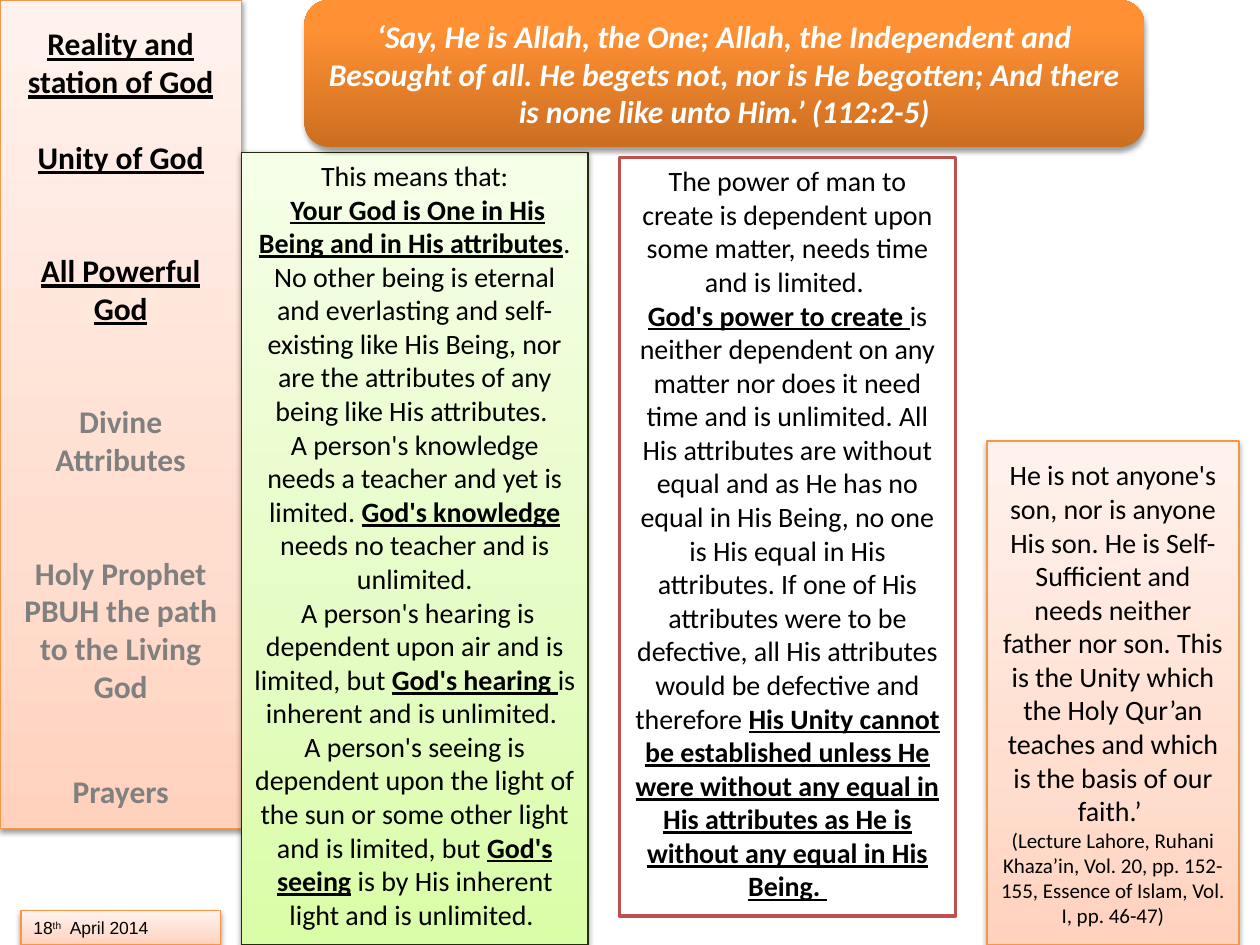
from copy import deepcopy

from lxml.etree import SubElement
from pptx import Presentation
from pptx.dml.color import RGBColor
from pptx.enum.shapes import MSO_SHAPE
from pptx.enum.text import MSO_ANCHOR, PP_ALIGN
from pptx.oxml.ns import qn
from pptx.util import Pt

BLACK = RGBColor(0x00, 0x00, 0x00)
WHITE = RGBColor(0xFF, 0xFF, 0xFF)
GREY = RGBColor(0x80, 0x80, 0x80)
ORANGE = RGBColor(0xF7, 0x96, 0x46)
RED = RGBColor(0xC0, 0x50, 0x4D)
DARK_GREEN = RGBColor(0x23, 0x2C, 0x12)

# Gradients run from bottom to top: (position, colour)
PEACH = [(0, RGBColor(0xFF, 0xD2, 0xBD)), (0.35, RGBColor(0xFF, 0xDE, 0xD0)),
         (1, RGBColor(0xFF, 0xF2, 0xED))]
LIME = [(0, RGBColor(0xDA, 0xFD, 0xA7)), (0.35, RGBColor(0xE4, 0xFC, 0xC2)),
        (1, RGBColor(0xF5, 0xFF, 0xE7))]
AMBER = [(0, RGBColor(0xCC, 0x6E, 0x20)), (0.8, RGBColor(0xFF, 0x90, 0x34)),
         (1, RGBColor(0xFF, 0x91, 0x36))]

# Sidebar topics: text, space before, already covered
TOPICS = [
    ("Reality and station of God", 0, True),
    ("Unity of God", 21.6, True),
    ("All Powerful God", 43.2, True),
    ("Divine Attributes", 43.2, False),
    ("Holy Prophet PBUH the path to the Living God", 43.2, False),
    ("Prayers", 38.5, False),
]

# Asterisks enclose the emphasised words
MEANING = [
    "This means that:",
    " *Your God is One in His Being and in His attributes*. No other being is eternal and "
    "everlasting and self-existing like His Being, nor are the attributes of any being like "
    "His attributes. ",
    "A person's knowledge needs a teacher and yet is limited. *God's knowledge *needs no "
    "teacher and is unlimited.",
    " A person's hearing is dependent upon air and is limited, but *God's hearing *is "
    "inherent and is unlimited. ",
    "A person's seeing is dependent upon the light of the sun or some other light and is "
    "limited, but *God's seeing* is by His inherent light and is unlimited. ",
]
POWER = [
    "The power of man to create is dependent upon some matter, needs time and is limited. ",
    "*God's power to create *is neither dependent on any matter nor does it need time and is "
    "unlimited. All His attributes are without equal and as He has no equal in His Being, no "
    "one is His equal in His attributes. If one of His attributes were to be defective, all "
    "His attributes would be defective and therefore *His Unity cannot be established unless "
    "He were without any equal in His attributes as He is without any equal in His Being. *",
]
CONCLUSION = (
    "He is not anyone's son, nor is anyone His son. He is Self-Sufficient and needs neither "
    "father nor son. This is the Unity which the Holy Qur’an teaches and which is the basis "
    "of our faith.’ "
)
REFERENCE = (
    "(Lecture Lahore, Ruhani Khaza’in, Vol. 20, pp. 152-155, Essence of Islam, Vol. I, "
    "pp. 46-47)"
)
QUOTE = (
    "‘Say, He is Allah, the One; Allah, the Independent and Besought of all. He begets not, "
    "nor is He begotten; And there is none like unto Him.’ (112:2-5)"
)


class SlideBuilder:
    font_name = "Calibri"

    def __init__(self, slide):
        self.slide = slide

    def panel(self, left, top, width, height, fill, line=None, line_width=0.75,
              kind=MSO_SHAPE.RECTANGLE, anchor=MSO_ANCHOR.TOP):
        shape = self.slide.shapes.add_shape(
            kind, Pt(left), Pt(top), Pt(width), Pt(height))
        shape.shadow.inherit = False
        if isinstance(fill, list):
            self.gradient(shape, fill)
            self.shadow(shape)
        else:
            shape.fill.solid()
            shape.fill.fore_color.rgb = fill
        if line is None:
            shape.line.fill.background()
        else:
            shape.line.color.rgb = line
            shape.line.width = Pt(line_width)
        shape.text_frame.word_wrap = True
        shape.text_frame.vertical_anchor = anchor
        return shape

    def gradient(self, shape, stops):
        shape.fill.gradient()
        shape.fill.gradient_angle = 90
        stop_list = shape._element.spPr.find(qn("a:gradFill")).find(qn("a:gsLst"))
        stop_list.append(deepcopy(stop_list[-1]))
        for stop, (position, color) in zip(shape.fill.gradient_stops, stops):
            stop.position = position
            stop.color.rgb = color

    def shadow(self, shape):
        effects = shape._element.spPr.find(qn("a:effectLst"))
        outer = SubElement(effects, qn("a:outerShdw"), blurRad=str(Pt(3.1)),
                           dist=str(Pt(1.6)), dir="5400000", rotWithShape="0")
        color = SubElement(outer, qn("a:srgbClr"), val="000000")
        SubElement(color, qn("a:alpha"), val="38000")

    def paragraph(self, shape, text, size=16, color=BLACK, name=font_name,
                  align=PP_ALIGN.CENTER, space_before=0):
        frame = shape.text_frame
        paragraph = frame.paragraphs[0]
        if paragraph.runs:
            paragraph = frame.add_paragraph()
        paragraph.alignment = align
        paragraph.space_before = Pt(space_before)
        paragraph.font.size = Pt(size)
        paragraph.font.name = name
        paragraph.font.color.rgb = color
        for index, part in enumerate(text.split("*")):
            if part:
                run = paragraph.add_run()
                run.text = part
                if index % 2:
                    run.font.bold = run.font.underline = True
        return paragraph


def main():
    presentation = Presentation()
    presentation.slide_width, presentation.slide_height = Pt(720), Pt(540)
    blank_layout = presentation.slide_layouts[6]
    builder = SlideBuilder(presentation.slides.add_slide(blank_layout))

    # Sidebar with the topics
    sidebar = builder.panel(0, 0, 138, 473.5, PEACH, ORANGE)
    sidebar.text_frame.margin_top = Pt(14)
    for text, space, covered in TOPICS:
        paragraph = builder.paragraph(sidebar, text, 18, BLACK if covered else GREY,
                                      space_before=space)
        paragraph.font.bold = True
        paragraph.font.underline = covered

    # Two columns of explanation
    meaning = builder.panel(138, 87, 198, 453, LIME, DARK_GREEN)
    power = builder.panel(354, 90, 192, 433.5, WHITE, RED, 2)
    for shape, texts in ((meaning, MEANING), (power, POWER)):
        for text in texts:
            builder.paragraph(shape, text)

    # Date
    date = builder.panel(12, 520.5, 114, 19.5, PEACH, ORANGE)
    paragraph = builder.paragraph(date, "18*th*  April 2014", 10, name="Arial",
                                  align=PP_ALIGN.LEFT)
    ordinal = paragraph.runs[1].font
    ordinal.bold = ordinal.underline = False
    ordinal._element.set("baseline", "30000")

    # Quotation
    quote = builder.panel(174, 0, 480, 84, AMBER, kind=MSO_SHAPE.ROUNDED_RECTANGLE,
                          anchor=MSO_ANCHOR.MIDDLE)
    paragraph = builder.paragraph(quote, QUOTE, 18, WHITE)
    paragraph.font.bold = paragraph.font.italic = True

    # Conclusion and reference
    conclusion = builder.panel(564, 252, 144, 288, PEACH, ORANGE, anchor=MSO_ANCHOR.MIDDLE)
    builder.paragraph(conclusion, CONCLUSION)
    builder.paragraph(conclusion, REFERENCE, 12)

    presentation.save("out.pptx")


if __name__ == "__main__":
    main()
